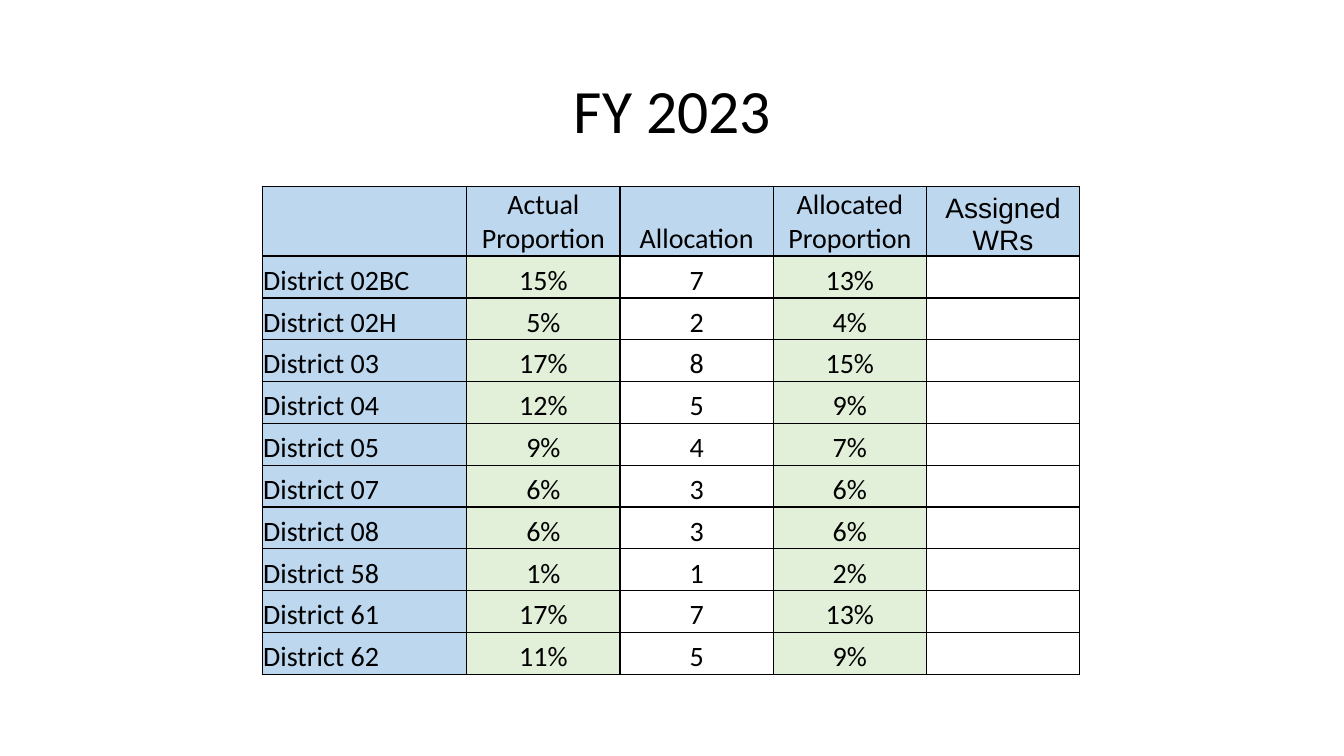
from dataclasses import astuple, dataclass

from lxml.etree import SubElement
from pptx import Presentation
from pptx.dml.color import RGBColor
from pptx.enum.text import MSO_ANCHOR, PP_ALIGN
from pptx.oxml.ns import qn
from pptx.slide import Slide
from pptx.table import _Cell
from pptx.util import Inches, Pt

BLACK = "000000"
WHITE = "FFFFFF"
BLUE = "BDD7EE"
GREEN = "E2F0D9"

TABLE_LEFT, TABLE_TOP, TABLE_HEIGHT = 2.6, 1.85, 4.83
HEADER_HEIGHT = 0.68
COLUMN_WIDTHS = (2.03, 1.52, 1.52, 1.52, 1.52)
COLUMN_FILLS = (BLUE, GREEN, WHITE, GREEN, WHITE)
HEADERS = ("", "Actual Proportion", "Allocation", "Allocated Proportion", "Assigned WRs")


@dataclass(frozen=True)
class District:
    name: str
    actual: str
    allocation: str
    allocated: str
    assigned: str = ""


DISTRICTS = (
    District("District 02BC", "15%", "7", "13%"),
    District("District 02H", "5%", "2", "4%"),
    District("District 03", "17%", "8", "15%"),
    District("District 04", "12%", "5", "9%"),
    District("District 05", "9%", "4", "7%"),
    District("District 07", "6%", "3", "6%"),
    District("District 08", "6%", "3", "6%"),
    District("District 58", "1%", "1", "2%"),
    District("District 61", "17%", "7", "13%"),
    District("District 62", "11%", "5", "9%"),
)


def color(hex_value: str) -> RGBColor:
    return RGBColor.from_string(hex_value)


def add_borders(cell: _Cell) -> None:
    properties = cell._tc.get_or_add_tcPr()
    for index, side in enumerate(("lnL", "lnR", "lnT", "lnB")):
        line = SubElement(properties, qn(f"a:{side}"), w=str(Pt(1)))
        fill = SubElement(line, qn("a:solidFill"))
        SubElement(fill, qn("a:srgbClr"), val=BLACK)
        properties.remove(line)
        properties.insert(index, line)  # borders precede the cell fill


def format_cell(cell: _Cell, text: str, fill: str, alignment: PP_ALIGN, font: str) -> None:
    cell.text = text
    cell.vertical_anchor = MSO_ANCHOR.BOTTOM
    cell.margin_left = cell.margin_right = cell.margin_top = Inches(0.01)
    cell.margin_bottom = 0
    cell.fill.solid()
    cell.fill.fore_color.rgb = color(fill)
    add_borders(cell)
    paragraph = cell.text_frame.paragraphs[0]
    paragraph.alignment = alignment
    paragraph.font.name = font
    paragraph.font.size = Pt(20)
    paragraph.font.bold = False
    paragraph.font.color.rgb = color(BLACK)


def add_title(slide: Slide, text: str) -> None:
    title = slide.shapes.title
    title.left, title.top = Inches(0.92), Inches(0.4)
    title.width, title.height = Inches(11.5), Inches(1.45)
    title.text_frame.text = text
    title.text_frame.vertical_anchor = MSO_ANCHOR.MIDDLE
    paragraph = title.text_frame.paragraphs[0]
    paragraph.alignment = PP_ALIGN.CENTER
    paragraph.line_spacing = 0.9
    paragraph.font.name = "Calibri"
    paragraph.font.size = Pt(44)
    paragraph.font.color.rgb = color(BLACK)


def add_allocation_table(slide: Slide) -> None:
    rows = (HEADERS, *map(astuple, DISTRICTS))
    table = slide.shapes.add_table(
        len(rows), len(HEADERS), Inches(TABLE_LEFT), Inches(TABLE_TOP),
        Inches(sum(COLUMN_WIDTHS)), Inches(TABLE_HEIGHT),
    ).table
    table.horz_banding = False
    for column, width in zip(table.columns, COLUMN_WIDTHS):
        column.width = Inches(width)
    district_height = (TABLE_HEIGHT - HEADER_HEIGHT) / len(DISTRICTS)
    for row_index, texts in enumerate(rows):
        is_header = row_index == 0
        table.rows[row_index].height = Inches(HEADER_HEIGHT if is_header else district_height)
        for column_index, text in enumerate(texts):
            format_cell(
                table.cell(row_index, column_index),
                text,
                BLUE if is_header else COLUMN_FILLS[column_index],
                PP_ALIGN.CENTER if is_header or column_index else PP_ALIGN.LEFT,
                "Arial" if text == "Assigned WRs" else "Calibri",
            )


def main() -> None:
    presentation = Presentation()
    presentation.slide_width, presentation.slide_height = Inches(13.33), Inches(7.5)
    slide = presentation.slides.add_slide(presentation.slide_layouts[5])
    add_title(slide, "FY 2023")
    add_allocation_table(slide)
    presentation.save("out.pptx")


if __name__ == "__main__":
    main()
